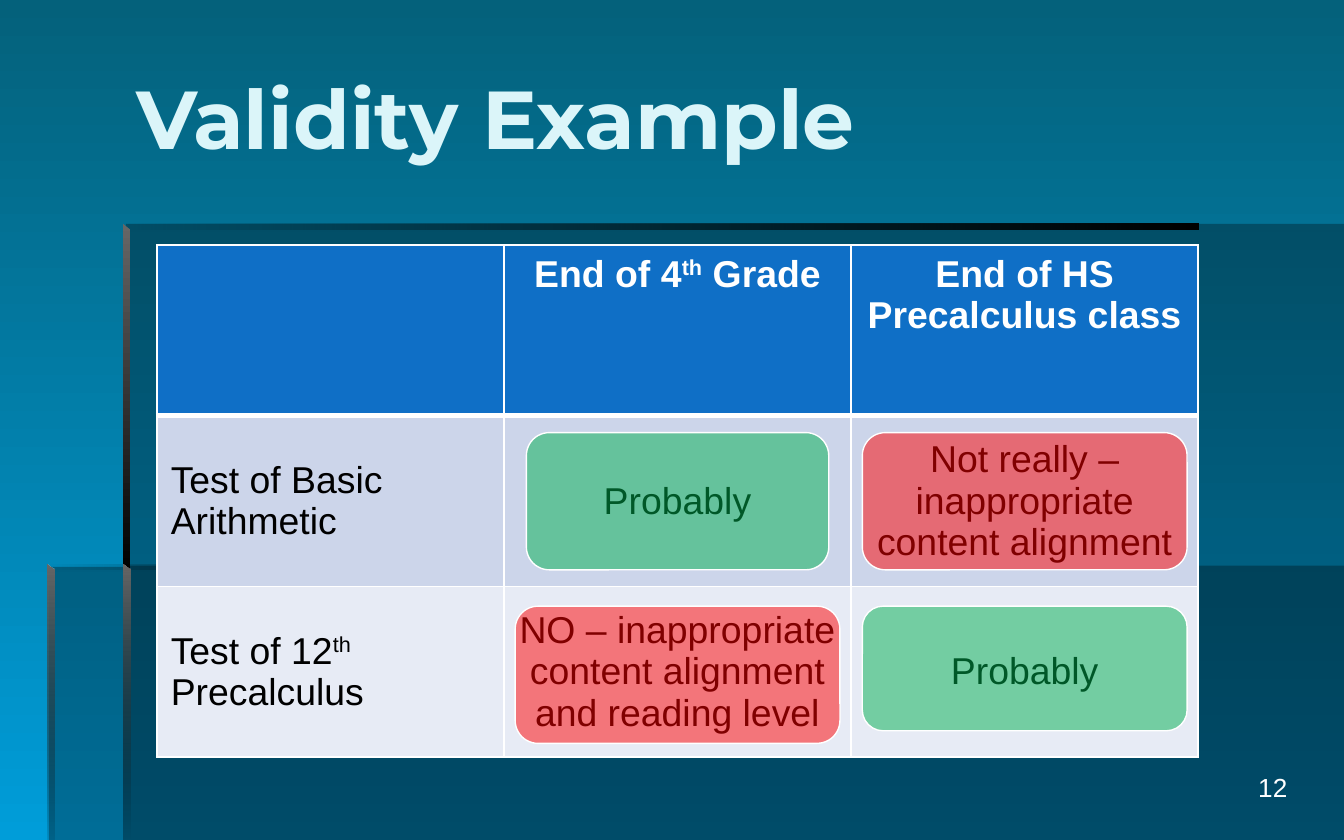
"""Build the Validity Example slide: stepped panels, a table and four verdict boxes."""
from lxml import etree
from pptx import Presentation, util as u
from pptx.dml.color import RGBColor
from pptx.enum import shapes, text
from pptx.oxml import ns

PX = 9525
BLACK = RGBColor(0, 0, 0)
WHITE = RGBColor(255, 255, 255)
GREY = RGBColor(0x66, 0x66, 0x66)
DEEP = RGBColor(0x04, 0x61, 0x7B)
SKY = RGBColor(0x00, 0x9D, 0xD9)
PALE = RGBColor(0xDB, 0xF5, 0xF9)
BLUE = RGBColor(0x0F, 0x6F, 0xC6)
MIST = RGBColor(0xCC, 0xD5, 0xEA)
LIGHT = RGBColor(0xE7, 0xEB, 0xF5)
GREEN = RGBColor(0x00, 0xB0, 0x50)
RED = RGBColor(0xFF, 0, 0)


def paint(shape, stops, angle=0):
    fill = shape.fill
    if len(stops) == 1:
        fill.solid()
        fill.fore_color.rgb = stops[0][0]
    else:
        fill.gradient()
        fill.gradient_angle = angle
        for stop, (color, _) in zip(fill.gradient_stops, stops):
            stop.color.rgb = color
    for node, (_, alpha) in zip(shape._element.spPr.iter(ns.qn("a:srgbClr")), stops):
        if alpha < 100:
            etree.SubElement(node, ns.qn("a:alpha")).set("val", str(alpha * 1000))
    shape.shadow.inherit = False


def write(frame, runs, size, color, align, bold=False, face="Arial"):
    frame.word_wrap = True
    par = frame.paragraphs[0]
    par.alignment = align
    for words, raised in runs:
        run = par.add_run()
        run.text = words
        font = run.font
        font.size, font.bold, font.name = u.Pt(size), bold, face
        font.color.rgb = color
        if raised:
            run._r.get_or_add_rPr().set("baseline", "30000")


deck = Presentation()
deck.slide_width, deck.slide_height = 960 * PX, 600 * PX
slide = deck.slides.add_slide(deck.slide_layouts[6])
back = slide.background.fill
back.gradient()
back.gradient_angle = 270
for stop, color in zip(back.gradient_stops, (DEEP, SKY)):
    stop.color.rgb = color

veil = [(BLACK, 30)]
rise = [(BLACK, 0), (BLACK, 100)]
pieces = [
    ([(88, 404), (88, 600), (960, 600), (960, 404)], veil, 0),
    ([(90, 405), (35, 405), (35, 600), (960, 600), (960, 160), (90, 160)], veil, 0),
]
for x, y, wide in ((88, 160, 768), (34, 403, 480)):
    pieces.append(([(x, y), (x, y + 4), (x + wide, y + 4), (x + wide, y)], rise, 0))
for x, y, end, alpha in ((88, 160, 408, 100), (88, 403, 600, 0), (34, 403, 600, 10)):
    edge = [(x, y), (x, end), (x + 5, end), (x + 5, y + 4)]
    pieces.append((edge, [(GREY, 100), (BLACK, alpha)], 270))
for points, stops, angle in pieces:
    path = slide.shapes.build_freeform(*points[0], scale=PX)
    path.add_line_segments(points[1:], close=True)
    shape = path.convert_to_shape()
    paint(shape, stops, angle)
    shape.line.fill.background()

LEFT, MID, RIGHT = text.PP_ALIGN.LEFT, text.PP_ALIGN.CENTER, text.PP_ALIGN.RIGHT
title = slide.shapes.add_textbox(88 * PX, 21 * PX, 840 * PX, 125 * PX).text_frame
title.vertical_anchor = text.MSO_ANCHOR.MIDDLE
write(title, [("Validity Example", False)], 44, PALE, LEFT, True, "Montserrat")

rows = [
    [
        [],
        [("End of 4", False), ("th", True), (" Grade", False)],
        [("End of HS Precalculus class", False)],
    ],
    [
        [("Test of Basic Arithmetic", False)],
        [("Probably", False)],
        [("Not really – inappropriate content alignment", False)],
    ],
    [
        [("Test of 12", False), ("th ", True), ("Precalculus", False)],
        [("NO – inappropriate content alignment and reading level", False)],
        [("Probably", False)],
    ],
]
table = slide.shapes.add_table(3, 3, 112 * PX, 175 * PX, 744 * PX, 366 * PX).table
for col in table.columns:
    col.width = 248 * PX
for i, row in enumerate(rows):
    table.rows[i].height = 122 * PX
    for j, runs in enumerate(row):
        cell = table.cell(i, j)
        cell.margin_left = cell.margin_right = 10 * PX
        cell.margin_top = cell.margin_bottom = 6 * PX
        cell.vertical_anchor = text.MSO_ANCHOR.MIDDLE if i else text.MSO_ANCHOR.TOP
        cell.fill.solid()
        cell.fill.fore_color.rgb = (BLUE, MIST, LIGHT)[i]
        write(cell.text_frame, runs, 20, BLACK if i else WHITE,
              MID if j or not i else LEFT, not i)
        props = cell._tc.get_or_add_tcPr()
        for k, side in enumerate("LRTB"):
            thick = (i, side) in ((0, "B"), (1, "T"))
            line = etree.Element(ns.qn("a:ln" + side), w=str(u.Pt(3 if thick else 1)))
            solid = etree.SubElement(line, ns.qn("a:solidFill"))
            etree.SubElement(solid, ns.qn("a:srgbClr")).set("val", str(WHITE))
            props.insert(k, line)

for x, y, wide, high, color in (
    (376, 309, 216, 98, GREEN),
    (616, 309, 232, 98, RED),
    (368, 433, 232, 98, RED),
    (616, 433, 232, 89, GREEN),
):
    box = slide.shapes.add_shape(
        shapes.MSO_SHAPE.ROUNDED_RECTANGLE, x * PX, y * PX, wide * PX, high * PX)
    paint(box, [(color, 50)])
    box.line.color.rgb = WHITE
    box.line.width = u.Pt(0.75)

number = slide.shapes.add_textbox(729 * PX, 546 * PX, 200 * PX, 41 * PX).text_frame
write(number, [("12", False)], 14, WHITE, RIGHT)
deck.save("out.pptx")
